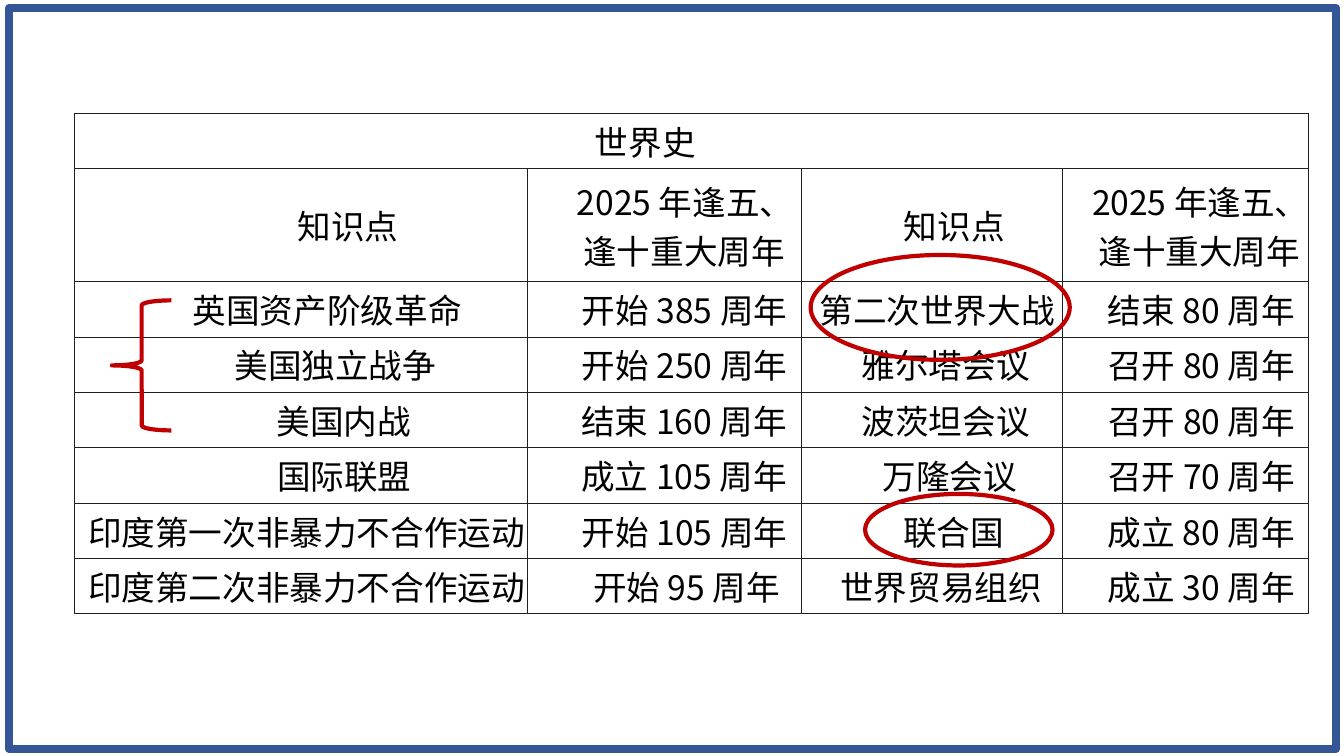
from typing import NamedTuple

from lxml import etree
from pptx import Presentation
from pptx.dml.color import RGBColor
from pptx.enum.shapes import MSO_SHAPE
from pptx.enum.text import MSO_ANCHOR, PP_ALIGN
from pptx.oxml.ns import qn
from pptx.util import Pt

EMU_PER_PX = 9144
FONT = "Noto Sans CJK SC"
COLORS = {"frame": "355696", "mark": "C00000", "grid": "231F20", "text": "000000"}
RECTANGLE, OVAL, BRACE = MSO_SHAPE.RECTANGLE, MSO_SHAPE.OVAL, MSO_SHAPE.LEFT_BRACE
CENTER, LEFT, MIDDLE = PP_ALIGN.CENTER, PP_ALIGN.LEFT, MSO_ANCHOR.MIDDLE
INNER_LINE, OUTER_LINE = 0.25, 0.75


class Outline(NamedTuple):
    kind: MSO_SHAPE
    left: int
    top: int
    width: int
    height: int
    color: str
    weight: int


class Entry(NamedTuple):
    text: str
    indent: int
    first_line: int = 0
    align: PP_ALIGN = CENTER
    line_spacing: float = 1.0


FRAME = Outline(RECTANGLE, 9, 8, 1316, 735, "frame", 6)
MARKS = [
    Outline(OVAL, 804, 253, 257, 104, "mark", 3),
    Outline(OVAL, 858, 490, 186, 71, "mark", 3),
    Outline(BRACE, 111, 298, 59, 129, "mark", 3),
]

TABLE_LEFT, TABLE_TOP = 74, 112
COLUMN_WIDTHS = [449, 272, 258, 245]
ROW_HEIGHTS = [55, 112] + [55] * 6
ANNIVERSARY = "2025 年逢五、 逢十重大周年"
TITLE = Entry("世界史", 516, align=LEFT)
ROWS = [
    [TITLE],
    [Entry("知识点", 93), Entry(ANNIVERSARY, 39, 2, line_spacing=1.02),
     Entry("知识点", 45), Entry(ANNIVERSARY, 28, 2, line_spacing=1.02)],
    [Entry("英国资产阶级革命", 52), Entry("开始 385 周年", 40),
     Entry("第二次世界大战", 11), Entry("结束 80 周年", 32)],
    [Entry("美国独立战争", 68), Entry("开始 250 周年", 40),
     Entry("雅尔塔会议", 28), Entry("召开 80 周年", 33)],
    [Entry("美国内战", 85), Entry("结束 160 周年", 39),
     Entry("波茨坦会议", 28), Entry("召开 80 周年", 33)],
    [Entry("国际联盟", 86), Entry("成立 105 周年", 39),
     Entry("万隆会议", 36), Entry("召开 70 周年", 33)],
    [Entry("印度第一次非暴力不合作运动", 11), Entry("开始 105 周年", 40),
     Entry("联合国", 44), Entry("成立 80 周年", 32)],
    [Entry("印度第二次非暴力不合作运动", 11), Entry("开始 95 周年", 44),
     Entry("世界贸易组织", 19), Entry("成立 30 周年", 32)],
]


def px(length: int) -> int:
    return length * EMU_PER_PX


def draw_outline(page, outline: Outline) -> None:
    shape = page.shapes.add_shape(
        outline.kind, px(outline.left), px(outline.top), px(outline.width), px(outline.height))
    shape.shadow.inherit = False
    shape.fill.background()
    shape.line.color.rgb = RGBColor.from_string(COLORS[outline.color])
    shape.line.width = Pt(outline.weight)


def set_border(cell, side: str, weight: float) -> None:
    """Add one cell border; side is L, R, T or B, called in that order."""
    properties = cell._tc.get_or_add_tcPr()
    line = etree.SubElement(properties, qn(f"a:ln{side}"), w=str(int(Pt(weight))))
    fill = etree.SubElement(line, qn("a:solidFill"))
    etree.SubElement(fill, qn("a:srgbClr"), val=COLORS["grid"])


def write_entry(cell, entry: Entry) -> None:
    para = cell.text_frame.paragraphs[0]
    para.alignment = entry.align
    para.line_spacing = entry.line_spacing
    properties = para._p.get_or_add_pPr()
    properties.set("marL", str(px(entry.indent)))
    properties.set("indent", str(px(entry.first_line)))
    span = para.add_run()
    span.text = entry.text
    span.font.size = Pt(24)
    span.font.bold = False
    span.font.name = FONT
    span.font.color.rgb = RGBColor.from_string(COLORS["text"])
    etree.SubElement(span._r.get_or_add_rPr(), qn("a:ea"), typeface=FONT)


def format_cell(cell, row: int, column: int) -> None:
    last_row, last_column = len(ROW_HEIGHTS) - 1, len(COLUMN_WIDTHS) - 1
    cell.margin_left = cell.margin_right = cell.margin_top = cell.margin_bottom = 0
    cell.vertical_anchor = MIDDLE
    outer_sides = {"L": column == 0, "R": column == last_column or row == 0,
                   "T": False, "B": row == last_row}
    for side, is_outer in outer_sides.items():
        set_border(cell, side, OUTER_LINE if is_outer else INNER_LINE)
    cell.fill.background()


def draw_table(page) -> None:
    table = page.shapes.add_table(
        len(ROW_HEIGHTS), len(COLUMN_WIDTHS), px(TABLE_LEFT), px(TABLE_TOP),
        px(sum(COLUMN_WIDTHS)), px(sum(ROW_HEIGHTS))).table
    table.first_row = table.horz_banding = False
    for column, width in zip(table.columns, COLUMN_WIDTHS):
        column.width = px(width)
    for row, height in zip(table.rows, ROW_HEIGHTS):
        row.height = px(height)
    for row in range(len(ROW_HEIGHTS)):
        for column in range(len(COLUMN_WIDTHS)):
            format_cell(table.cell(row, column), row, column)
    table.cell(0, 0).merge(table.cell(0, len(COLUMN_WIDTHS) - 1))
    for row, entries in enumerate(ROWS):
        for column, entry in enumerate(entries):
            write_entry(table.cell(row, column), entry)


def main() -> None:
    deck = Presentation()
    deck.slide_width, deck.slide_height = px(1333), px(750)
    page = deck.slides.add_slide(deck.slide_layouts[6])
    draw_outline(page, FRAME)
    draw_table(page)
    for mark in MARKS:
        draw_outline(page, mark)
    deck.save("out.pptx")


if __name__ == "__main__":
    main()
